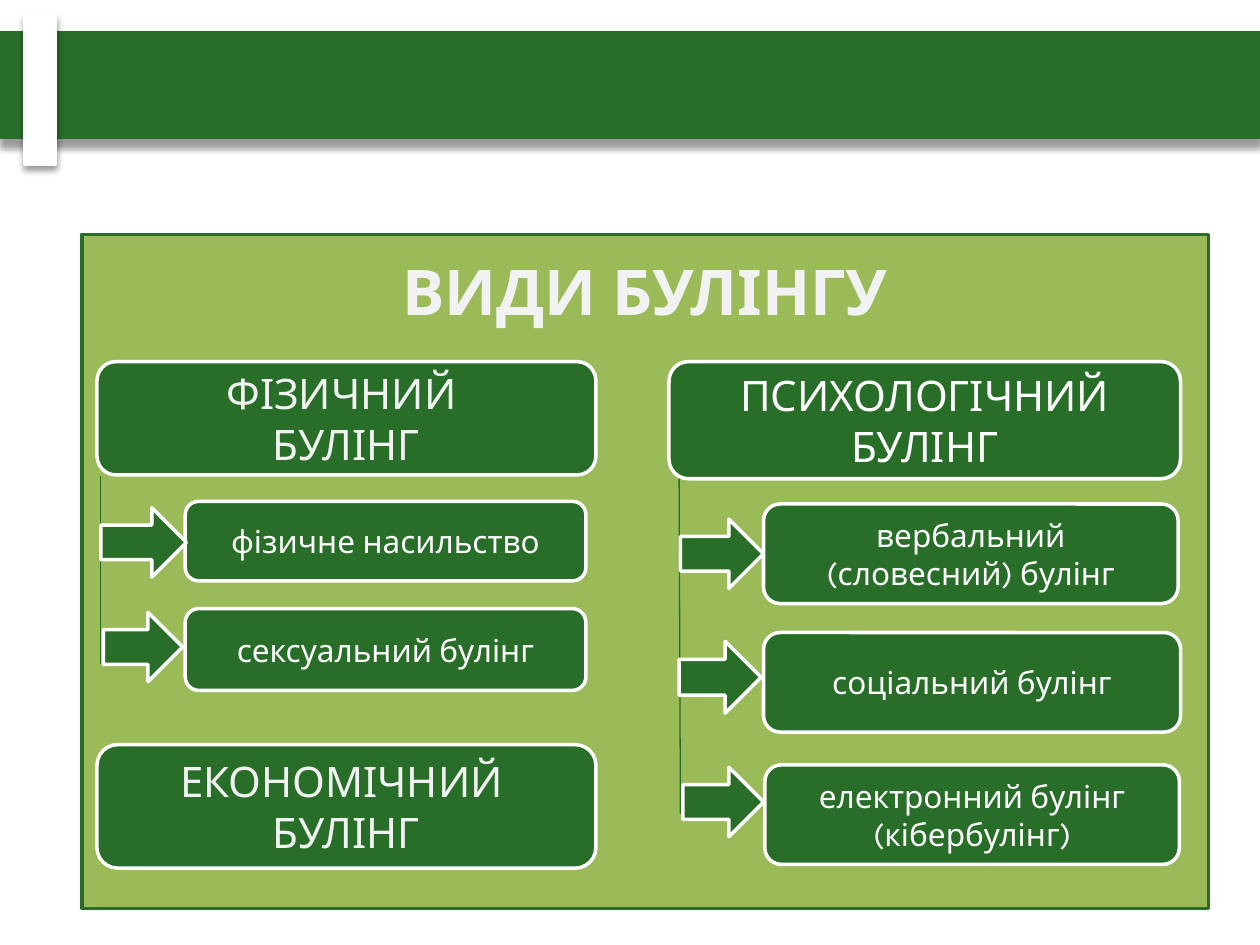
"""Build a slide that sorts the kinds of bullying into three groups."""
from typing import NamedTuple

from lxml import etree
from pptx import Presentation
from pptx import util as u
from pptx.dml.color import RGBColor
from pptx.enum import shapes, text
from pptx.oxml.ns import qn

GREEN = RGBColor(0x28, 0x6E, 0x28)
LIME = RGBColor(0x9B, 0xBB, 0x59)
WHITE = RGBColor(0xFF, 0xFF, 0xFF)
PALE = RGBColor(0xF2, 0xF2, 0xF2)
FONT = "Karla"


class Box(NamedTuple):
    left: float
    top: float
    width: float
    height: float


class Label(NamedTuple):
    lines: tuple[str, ...]
    size: int
    color: RGBColor = WHITE
    bold: bool = False


class Card(NamedTuple):
    box: Box
    label: Label


class Branch(NamedTuple):
    start: tuple[float, float]
    end: tuple[float, float]
    arrows: tuple[Box, ...]


PANEL = Box(0.65, 1.86, 8.94, 5.35)
TITLE = Label(("ВИДИ БУЛІНГУ",), 36, PALE, True)

CARDS = (
    Card(Box(0.77, 2.87, 3.96, 0.9), Label(("ФІЗИЧНИЙ ", "БУЛІНГ"), 24, PALE)),
    Card(Box(5.31, 2.87, 4.06, 0.93), Label(("ПСИХОЛОГІЧНИЙ БУЛІНГ",), 24)),
    Card(Box(0.77, 5.91, 3.96, 0.98), Label(("ЕКОНОМІЧНИЙ ", "БУЛІНГ"), 24, PALE)),
    Card(Box(1.47, 3.98, 3.18, 0.63), Label(("фізичне насильство",), 18)),
    Card(Box(1.47, 4.83, 3.18, 0.65), Label(("сексуальний булінг",), 18)),
    Card(Box(6.06, 4, 3.29, 0.79), Label(("вербальний (словесний) булінг",), 18)),
    Card(Box(6.06, 5.02, 3.31, 0.79), Label(("соціальний булінг",), 18)),
    Card(Box(6.07, 6.07, 3.29, 0.79), Label(("електронний булінг (кібербулінг)",), 18)),
)

BRANCHES = (
    Branch((0.8, 3.78), (0.8, 5.27),
           (Box(0.8, 4.03, 0.68, 0.55), Box(0.82, 4.86, 0.63, 0.55))),
    Branch((5.39, 3.8), (5.4, 6.46),
           (Box(5.4, 4.12, 0.66, 0.55), Box(5.39, 5.09, 0.65, 0.57),
            Box(5.42, 6.09, 0.64, 0.55))),
)


def add_block(slide, kind, box: Box, fill: RGBColor = GREEN, line: RGBColor = WHITE):
    """Add a filled and outlined preset shape without a shadow."""
    shape = slide.shapes.add_shape(kind, *(u.Inches(length) for length in box))
    shape.shadow.inherit = False
    shape.fill.solid()
    shape.fill.fore_color.rgb = fill
    shape.line.color.rgb = line
    shape.line.width = u.Pt(2)
    return shape


def add_shadow(shape, distance: float) -> None:
    """Cast a soft shadow straight down from the shape."""
    effects = shape._element.spPr.find(qn("a:effectLst"))
    shadow = etree.SubElement(effects, qn("a:outerShdw"), blurRad=str(u.Pt(4)),
                              dist=str(u.Pt(distance)), dir="5400000",
                              algn="ctr", rotWithShape="0")
    color = etree.SubElement(shadow, qn("a:srgbClr"), val="000000")
    etree.SubElement(color, qn("a:alpha"), val="40000")


def write_label(shape, label: Label, anchor=text.MSO_ANCHOR.MIDDLE) -> None:
    """Write each line of the label as a centred paragraph."""
    frame = shape.text_frame
    frame.word_wrap = True
    frame.vertical_anchor = anchor
    for index, line in enumerate(label.lines):
        paragraph = frame.add_paragraph() if index else frame.paragraphs[0]
        paragraph.alignment = text.PP_ALIGN.CENTER
        run = paragraph.add_run()
        run.text = line
        run.font.name = FONT
        run.font.size = u.Pt(label.size)
        run.font.bold = label.bold
        run.font.color.rgb = label.color


def add_branch(slide, branch: Branch) -> None:
    """Draw a vertical stem and the arrows that leave it."""
    stem = slide.shapes.add_connector(
        shapes.MSO_CONNECTOR.STRAIGHT,
        *(u.Inches(length) for length in branch.start + branch.end))
    stem.line.color.rgb = GREEN
    stem.line.width = u.Pt(0.75)
    etree.SubElement(stem._element.spPr, qn("a:effectLst"))
    for arrow in branch.arrows:
        add_block(slide, shapes.MSO_SHAPE.RIGHT_ARROW, arrow)


def main() -> None:
    """Build and save the slide."""
    presentation = Presentation()
    presentation.slide_width = u.Inches(10)
    presentation.slide_height = u.Inches(7.5)
    slide = presentation.slides.add_slide(presentation.slide_layouts[6])

    rectangle = shapes.MSO_SHAPE.RECTANGLE
    band = add_block(slide, rectangle, Box(0, 0.26, 10, 0.83), GREEN, GREEN)
    add_shadow(band, 5)
    tab = add_block(slide, rectangle, Box(0.2, 0.12, 0.24, 1.18), WHITE, WHITE)
    add_shadow(tab, 3)

    panel = add_block(slide, rectangle, PANEL, LIME, GREEN)
    panel.text_frame.margin_top = u.Inches(0.14)
    write_label(panel, TITLE, text.MSO_ANCHOR.TOP)

    for card in CARDS:
        shape = add_block(slide, shapes.MSO_SHAPE.ROUNDED_RECTANGLE, card.box)
        write_label(shape, card.label)
    for branch in BRANCHES:
        add_branch(slide, branch)

    presentation.save("out.pptx")


if __name__ == "__main__":
    main()
